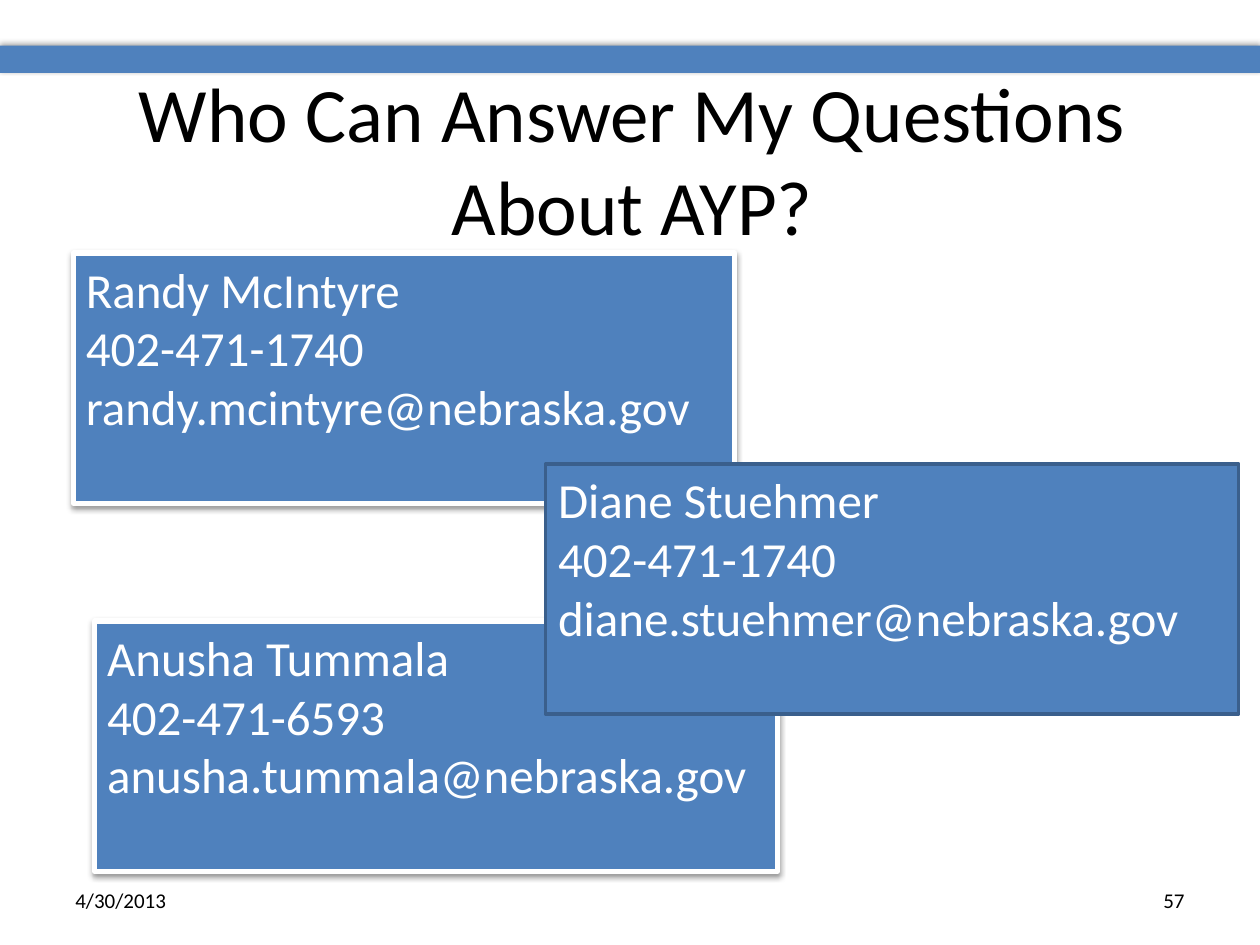
from lxml.etree import SubElement
from pptx import Presentation
from pptx.dml.color import RGBColor
from pptx.enum.shapes import MSO_SHAPE as Preset
from pptx.enum.text import MSO_ANCHOR as Anchor, PP_ALIGN as Align
from pptx.oxml.ns import qn
from pptx.util import Cm, Pt

BLUE = RGBColor(0x4F, 0x81, 0xBD)
DARK_BLUE = RGBColor(0x3A, 0x5F, 0x8C)
WHITE = RGBColor(0xFF, 0xFF, 0xFF)
BLACK = RGBColor(0, 0, 0)
TITLE_ONLY = 5


def write(frame, *lines, size, color=BLACK, align=Align.LEFT, anchor=Anchor.TOP):
    """Fill a text frame with one paragraph per line."""
    frame.word_wrap = True
    frame.vertical_anchor = anchor
    for index, line in enumerate(lines):
        paragraph = frame.add_paragraph() if index else frame.paragraphs[0]
        paragraph.text = line
        paragraph.alignment = align
        paragraph.font.name = "Calibri"
        paragraph.font.size = Pt(size)
        paragraph.font.color.rgb = color


def cast_shadow(shape, degrees):
    effects = shape._element.spPr.find(qn("a:effectLst"))
    shadow = SubElement(effects, qn("a:outerShdw"), blurRad=str(Pt(3.1)),
                        dist=str(Pt(1.6)), dir=str(degrees * 60000),
                        rotWithShape="0")
    black = SubElement(shadow, qn("a:srgbClr"), val=str(BLACK))
    SubElement(black, qn("a:alpha"), val="38000")


class ContactSlide:
    def __init__(self, deck):
        self.slide = deck.slides.add_slide(deck.slide_layouts[TITLE_ONLY])
        self.shapes = self.slide.shapes

    def block(self, preset, left, top, width, height):
        shape = self.shapes.add_shape(preset, Cm(left), Cm(top), Cm(width), Cm(height))
        shape.shadow.inherit = False
        shape.fill.solid()
        shape.fill.fore_color.rgb = BLUE
        return shape

    def band(self):
        band = self.block(Preset.CORNER, 0, -0.03, 25.4, 1.5)
        band.adjustments[0] = 0.367
        band.adjustments[1] = 0
        band.line.fill.background()
        cast_shadow(band, 270)

    def title(self, text):
        title = self.shapes.title
        title.left, title.top = Cm(1.32), Cm(1.27)
        title.width, title.height = Cm(22.86), Cm(3.84)
        write(title.text_frame, text, size=44, align=Align.CENTER,
              anchor=Anchor.MIDDLE)

    def footer(self, text, left, align):
        box = self.shapes.add_textbox(Cm(left), Cm(17.65), Cm(5.93), Cm(1.01))
        write(box.text_frame, text, size=12, align=align, anchor=Anchor.MIDDLE)

    def card(self, *lines, left, top, width, border=WHITE, weight=3, shadow=True):
        card = self.block(Preset.RECTANGLE, left, top, width, 5.05)
        card.line.color.rgb = border
        card.line.width = Pt(weight)
        if shadow:
            cast_shadow(card, 90)
        write(card.text_frame, *lines, size=28, color=WHITE)


def main():
    deck = Presentation()
    deck.slide_width, deck.slide_height = Cm(25.4), Cm(19.05)
    page = ContactSlide(deck)
    page.band()
    page.title("Who Can Answer My Questions About AYP?")
    page.footer("4/30/2013", 1.27, Align.LEFT)
    page.footer("57", 18.2, Align.RIGHT)
    page.card("Randy McIntyre", "402-471-1740", "randy.mcintyre@nebraska.gov",
              left=1.48, top=5.1, width=13.33)
    page.card("Anusha Tummala", "402-471-6593", "anusha.tummala@nebraska.gov",
              left=1.91, top=12.52, width=13.76)
    page.card("Diane Stuehmer", "402-471-1740", "diane.stuehmer@nebraska.gov",
              left=11, top=9.35, width=13.97,
              border=DARK_BLUE, weight=2, shadow=False)
    deck.save("out.pptx")


if __name__ == "__main__":
    main()
